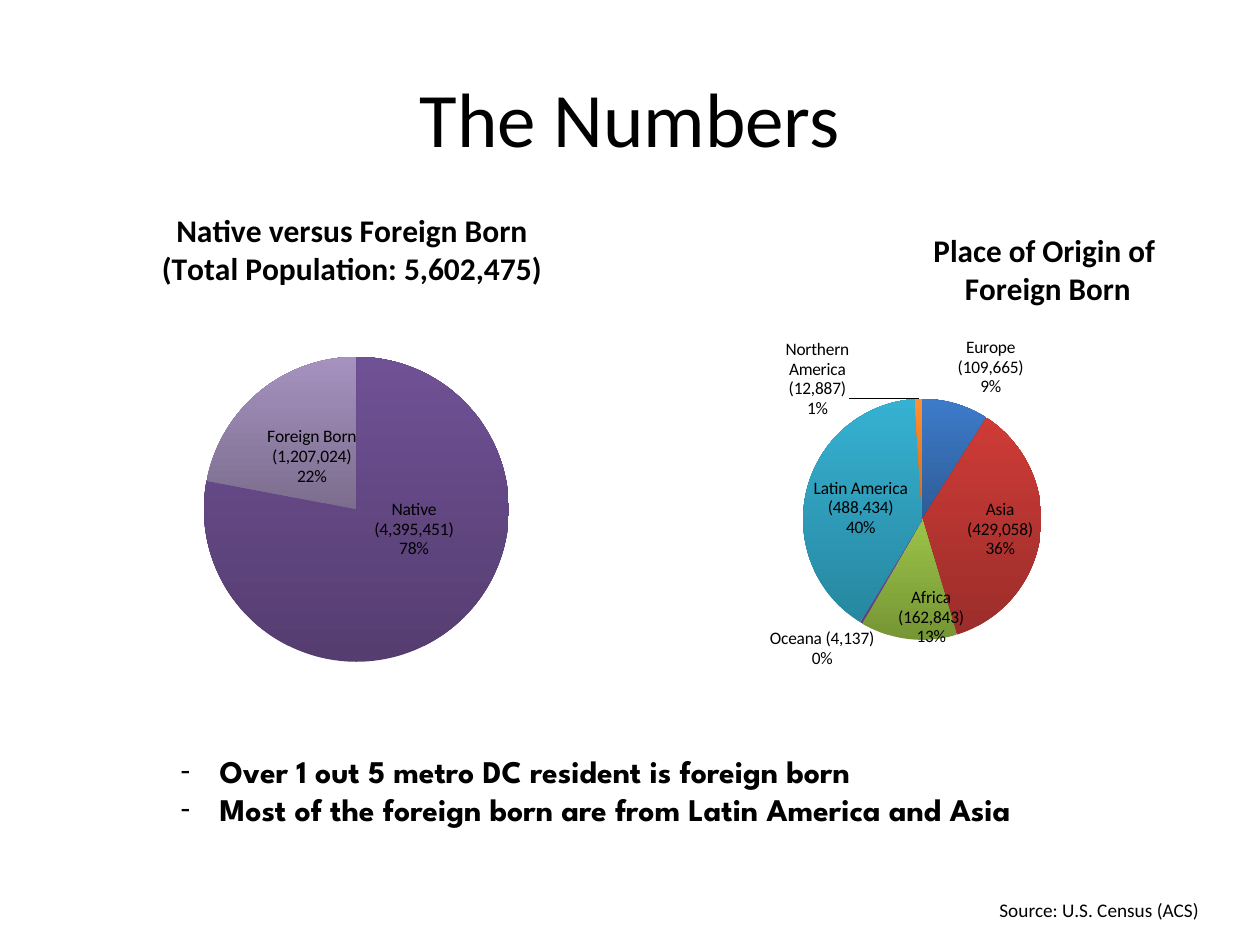
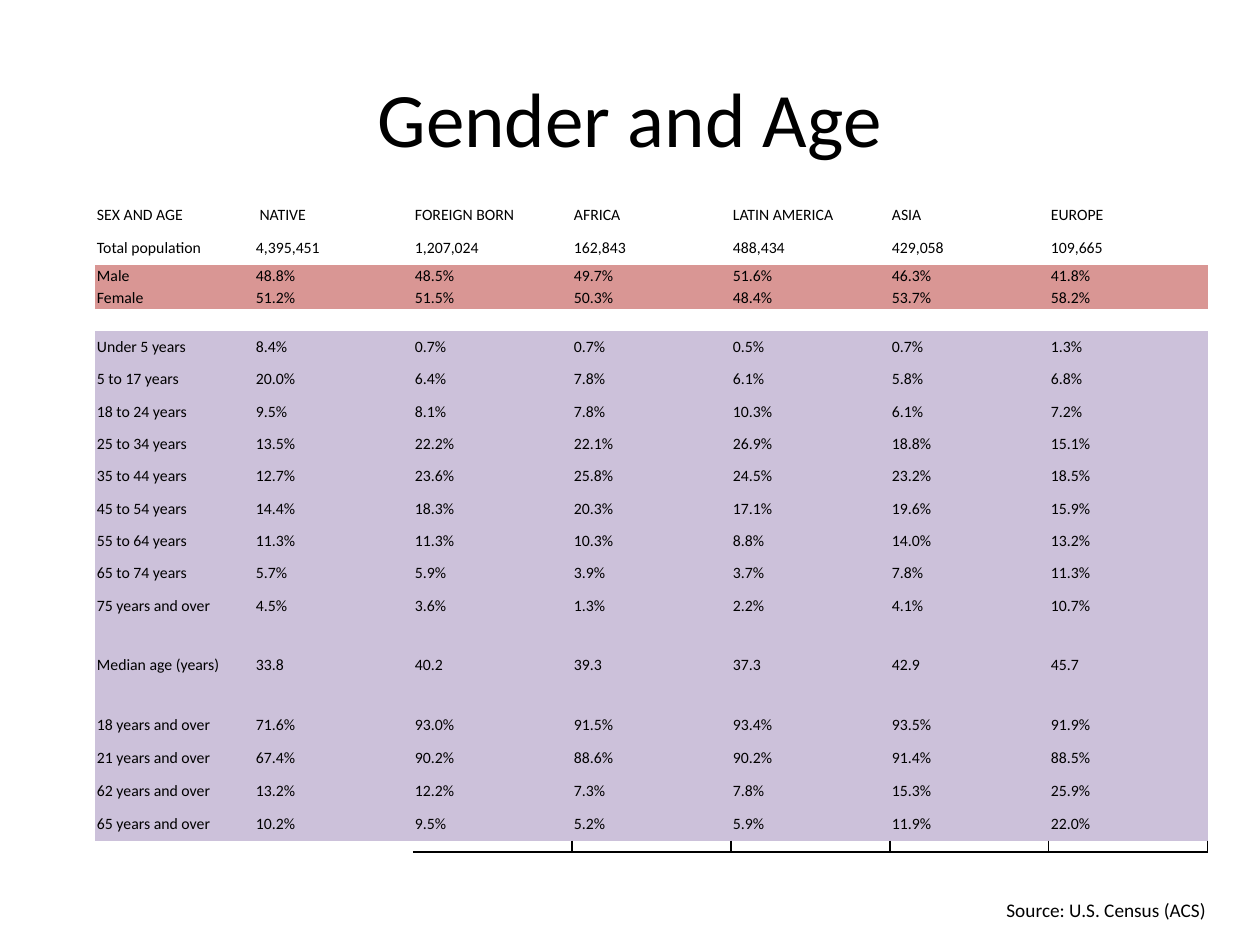
"""Build two slides on the foreign-born population: pie charts and an age table."""
from lxml.etree import SubElement
from pptx import Presentation
from pptx.chart.data import CategoryChartData
from pptx.dml.color import RGBColor
from pptx.enum.chart import XL_CHART_TYPE as CT
from pptx.enum.text import MSO_ANCHOR as ANCHOR, MSO_AUTO_SIZE as FIT, PP_ALIGN as ALIGN
from pptx.oxml import parse_xml
from pptx.oxml.ns import nsdecls, qn
from pptx.util import Emu, Pt

BLACK = RGBColor(0x00, 0x00, 0x00)
ROSE = RGBColor(0xD9, 0x96, 0x94)
LILAC = RGBColor(0xCC, 0xC1, 0xDA)
BLUE = RGBColor(0x3D, 0x7B, 0xCA), RGBColor(0x2D, 0x5C, 0x97)
RED = RGBColor(0xCE, 0x3B, 0x37), RGBColor(0x9B, 0x2D, 0x2A)
GREEN = RGBColor(0x9B, 0xC3, 0x48), RGBColor(0x76, 0x95, 0x35)
PURPLE = RGBColor(0x7B, 0x57, 0xA8), RGBColor(0x5D, 0x41, 0x7E)
TEAL = RGBColor(0x36, 0xB1, 0xD2), RGBColor(0x27, 0x87, 0xA0)
ORANGE = RGBColor(0xFF, 0x8F, 0x35), RGBColor(0xCB, 0x6C, 0x1D)
PLUM = RGBColor(0x6F, 0x51, 0x95), RGBColor(0x55, 0x3D, 0x70)
MAUVE = RGBColor(0xA6, 0x92, 0xBF), RGBColor(0x7C, 0x6D, 0x8E)

FONT = "Calibri"
BULLET_FONT = "League Spartan"
PX_PER_INCH = 126
CHART_TOP, CHART_SIZE = 189, 536
SOURCE = "Source: U.S. Census (ACS)"

# slices: category, percent, gradient, label position, label shift in px
PIES = [
    dict(left=630, title=["Place of Origin of ", "Foreign Born"], title_at=(303, 37),
         pie=(175, 210, 241), slices=[
             ("Europe (109,665)", 9, BLUE, "outEnd", (0, 0)),
             ("Asia (429,058)", 36, RED, "inEnd", (0, 24)),
             ("Africa (162,843)", 13, GREEN, "ctr", (16, 38)),
             ("Oceana (4,137)", 0.3, PURPLE, "outEnd", (17, 0)),
             ("Latin America (488,434)", 40, TEAL, "inEnd", (0, -14)),
             ("Northern America (12,887)", 1, ORANGE, "outEnd", (-102, 27))]),
    dict(left=84, title=["Native versus Foreign Born", "(Total Population: 5,602,475)"],
         title_at=(74, 17), pie=(120, 168, 305), slices=[
             ("Native (4,395,451)", 78, PLUM, "ctr", (9, -39)),
             ("Foreign Born (1,207,024)", 22, MAUVE, "ctr", (4, 6))]),
]
FINDINGS = ["Over 1 out 5 metro DC resident is foreign born",
            "Most of the foreign born are from Latin America and Asia"]

GAP = ("",) * 7
HEAD_ROWS = [
    ("SEX AND AGE", " NATIVE", "FOREIGN BORN", "AFRICA", "LATIN AMERICA", "ASIA", "EUROPE"),
    ("Total population", "4,395,451", "1,207,024", "162,843", "488,434", "429,058", "109,665"),
]
SEX_ROWS = [
    ("Male", "48.8%", "48.5%", "49.7%", "51.6%", "46.3%", "41.8%"),
    ("Female", "51.2%", "51.5%", "50.3%", "48.4%", "53.7%", "58.2%"),
]
AGE_ROWS = [
    ("Under 5 years", "8.4%", "0.7%", "0.7%", "0.5%", "0.7%", "1.3%"),
    ("5 to 17 years", "20.0%", "6.4%", "7.8%", "6.1%", "5.8%", "6.8%"),
    ("18 to 24 years", "9.5%", "8.1%", "7.8%", "10.3%", "6.1%", "7.2%"),
    ("25 to 34 years", "13.5%", "22.2%", "22.1%", "26.9%", "18.8%", "15.1%"),
    ("35 to 44 years", "12.7%", "23.6%", "25.8%", "24.5%", "23.2%", "18.5%"),
    ("45 to 54 years", "14.4%", "18.3%", "20.3%", "17.1%", "19.6%", "15.9%"),
    ("55 to 64 years", "11.3%", "11.3%", "10.3%", "8.8%", "14.0%", "13.2%"),
    ("65 to 74 years", "5.7%", "5.9%", "3.9%", "3.7%", "7.8%", "11.3%"),
    ("75 years and over", "4.5%", "3.6%", "1.3%", "2.2%", "4.1%", "10.7%"),
]
MEDIAN_ROWS = [
    GAP, ("Median age (years)", "33.8", "40.2", "39.3", "37.3", "42.9", "45.7"), GAP]
TOTAL_ROWS = [
    ("18 years and over", "71.6%", "93.0%", "91.5%", "93.4%", "93.5%", "91.9%"),
    ("21 years and over", "67.4%", "90.2%", "88.6%", "90.2%", "91.4%", "88.5%"),
    ("62 years and over", "13.2%", "12.2%", "7.3%", "7.8%", "15.3%", "25.9%"),
    ("65 years and over", "10.2%", "9.5%", "5.2%", "5.9%", "11.9%", "22.0%"),
]
# bands: rows, fill, row heights in px
BANDS = [
    (HEAD_ROWS, None, [33] * 2),
    (SEX_ROWS, ROSE, [22] * 2),
    ([GAP], None, [22]),
    (AGE_ROWS, LILAC, [32, 33, 32] * 3),
    (MEDIAN_ROWS, LILAC, [22, 43, 22]),
    (TOTAL_ROWS, LILAC, [33] * 4),
    ([GAP], None, [11]),
]
TABLE_LEFT, TABLE_TOP, COL_WIDTH = 95, 199, 159
FIRST_RULED_COL = 2
NO_STYLE = "{2D5ABB26-0587-4C30-8999-92F81FD0307C}"


def px(n):
    return Emu(round(n * 914400 / PX_PER_INCH))


def place(sp, *box):
    sp.left, sp.top, sp.width, sp.height = map(px, box)


def add_run(p, text, size, font=FONT, bold=False):
    r = p.add_run()
    r.text = text
    f = r.font
    f.size, f.name, f.bold, f.color.rgb = Pt(size), font, bold, BLACK


def new_slide(prs, layout, title, source_left):
    s = prs.slides.add_slide(prs.slide_layouts[layout])
    place(s.shapes.title, 63, 38, 1134, 158)
    tf = s.shapes.title.text_frame
    tf.vertical_anchor = ANCHOR.MIDDLE
    p = tf.paragraphs[0]
    p.alignment = ALIGN.CENTER
    add_run(p, title, 44)
    source = s.shapes.add_textbox(px(source_left), px(892), px(262), px(36))
    source.text_frame.word_wrap = True
    add_run(source.text_frame.paragraphs[0], SOURCE, 11)
    return s


def layout_xml(x, y, size=None, edge=True):
    parts = '<c:layoutTarget val="inner"/>' if size else ""
    if edge:
        parts += '<c:xMode val="edge"/><c:yMode val="edge"/>'
    values = dict(x=x, y=y, **(dict(w=size, h=size) if size else {}))
    parts += "".join(f'<c:{k} val="{v / CHART_SIZE:.4f}"/>' for k, v in values.items())
    return f"<c:layout {nsdecls('c')}><c:manualLayout>{parts}</c:manualLayout></c:layout>"


def set_layout(parent, index, xml):
    for old in parent.findall(qn("c:layout")):
        parent.remove(old)
    parent.insert(index, parse_xml(xml))


def labels_xml(slices):
    flags = dict(LegendKey=0, Val=0, CatName=1, SerName=0, Percent=1, BubbleSize=0)
    fmt = '<c:numFmt formatCode="0%" sourceLinked="0"/>'
    show = "".join(f'<c:show{k} val="{v}"/>' for k, v in flags.items())
    show += "<c:separator>\n</c:separator>"
    points = ""
    for i, (_, _, _, pos, shift) in enumerate(slices):
        layout = layout_xml(*shift, edge=False) if any(shift) else ""
        points += (f'<c:dLbl><c:idx val="{i}"/>{layout}{fmt}'
                   f'<c:dLblPos val="{pos}"/>{show}</c:dLbl>')
    return (f"<c:dLbls {nsdecls('c')}>{points}{fmt}{show}"
            '<c:showLeaderLines val="1"/></c:dLbls>')


def add_pie(s, left, title, title_at, pie, slices):
    data = CategoryChartData()
    data.categories = [sl[0] for sl in slices]
    data.add_series("Series 1", [sl[1] for sl in slices])
    chart = s.shapes.add_chart(CT.PIE, px(left), px(CHART_TOP), px(CHART_SIZE),
                               px(CHART_SIZE), data).chart
    chart.has_legend = False
    chart.font.size, chart.font.name, chart.font.color.rgb = Pt(10), FONT, BLACK
    chart.has_title = True
    tf = chart.chart_title.text_frame
    for i, line in enumerate(title):
        p = tf.paragraphs[0] if i == 0 else tf.add_paragraph()
        add_run(p, line, 18, bold=True)
    set_layout(chart.chart_title._element, 1, layout_xml(*title_at))
    plot = chart.plots[0]
    set_layout(plot._element.getparent(), 0, layout_xml(*pie))
    plot.vary_by_categories = True
    series = plot.series[0]
    for i, (_, _, (light, dark), _, _) in enumerate(slices):
        fill = series.points[i].format.fill
        fill.gradient()
        fill.gradient_angle = 90
        for stop, color in zip(fill.gradient_stops, (dark, light)):
            stop.color.rgb = color
    series._element.find(qn("c:cat")).addprevious(parse_xml(labels_xml(slices)))


def add_findings(s):
    body = s.placeholders[1]
    place(body, 168, 746, 976, 127)
    tf = body.text_frame
    tf.auto_size = FIT.NONE
    for i, text in enumerate(FINDINGS):
        p = tf.paragraphs[0] if i == 0 else tf.add_paragraph()
        p.space_before = Pt(0)
        add_run(p, text, 18, BULLET_FONT, True)
        pPr = p._p.get_or_add_pPr()
        pPr.set("marL", str(px(39)))
        pPr.set("indent", str(-px(39)))
        SubElement(pPr, qn("a:buFont"), typeface=FONT)
        SubElement(pPr, qn("a:buChar"), char="-")


def rule_cell(cell):
    tcPr = cell._tc.get_or_add_tcPr()
    for side, width in (("R", 0.75), ("B", 1.5)):
        ln = SubElement(tcPr, qn(f"a:ln{side}"), w=str(Pt(width)))
        SubElement(SubElement(ln, qn("a:solidFill")), qn("a:srgbClr"), val=str(BLACK))


def fill_cell(cell, text, color, size):
    cell.margin_left = cell.margin_right = px(2)
    cell.margin_top = cell.margin_bottom = px(1)
    cell.vertical_anchor = ANCHOR.MIDDLE
    p = cell.text_frame.paragraphs[0]
    if text:
        add_run(p, text, size)
    else:
        SubElement(p._p, qn("a:endParaRPr"), sz=str(size * 100))
    if color is None:
        cell.fill.background()
    else:
        cell.fill.solid()
        cell.fill.fore_color.rgb = color


def add_age_table(s):
    rows = [(row, color, height) for band, color, heights in BANDS
            for row, height in zip(band, heights)]
    n_cols = len(GAP)
    total = sum(height for _, _, height in rows)
    tbl = s.shapes.add_table(len(rows), n_cols, px(TABLE_LEFT), px(TABLE_TOP),
                             px(COL_WIDTH * n_cols), px(total)).table
    tbl.first_row = tbl.horz_banding = False
    tbl._tbl.tblPr.find(qn("a:tableStyleId")).text = NO_STYLE
    for col in tbl.columns:
        col.width = px(COL_WIDTH)
    for i, (row, color, height) in enumerate(rows):
        tbl.rows[i].height = px(height)
        last = i == len(rows) - 1
        for j, text in enumerate(row):
            cell = tbl.cell(i, j)
            if last and j >= FIRST_RULED_COL:
                rule_cell(cell)
            fill_cell(cell, text, color, 3 if last else 9)


def main():
    prs = Presentation()
    prs.slide_width, prs.slide_height = px(1260), px(945)
    numbers = new_slide(prs, 1, "The Numbers", 987)
    for pie in PIES:
        add_pie(numbers, **pie)
    add_findings(numbers)
    ages = new_slide(prs, 5, "Gender and Age", 994)
    add_age_table(ages)
    prs.save("out.pptx")


if __name__ == "__main__":
    main()
